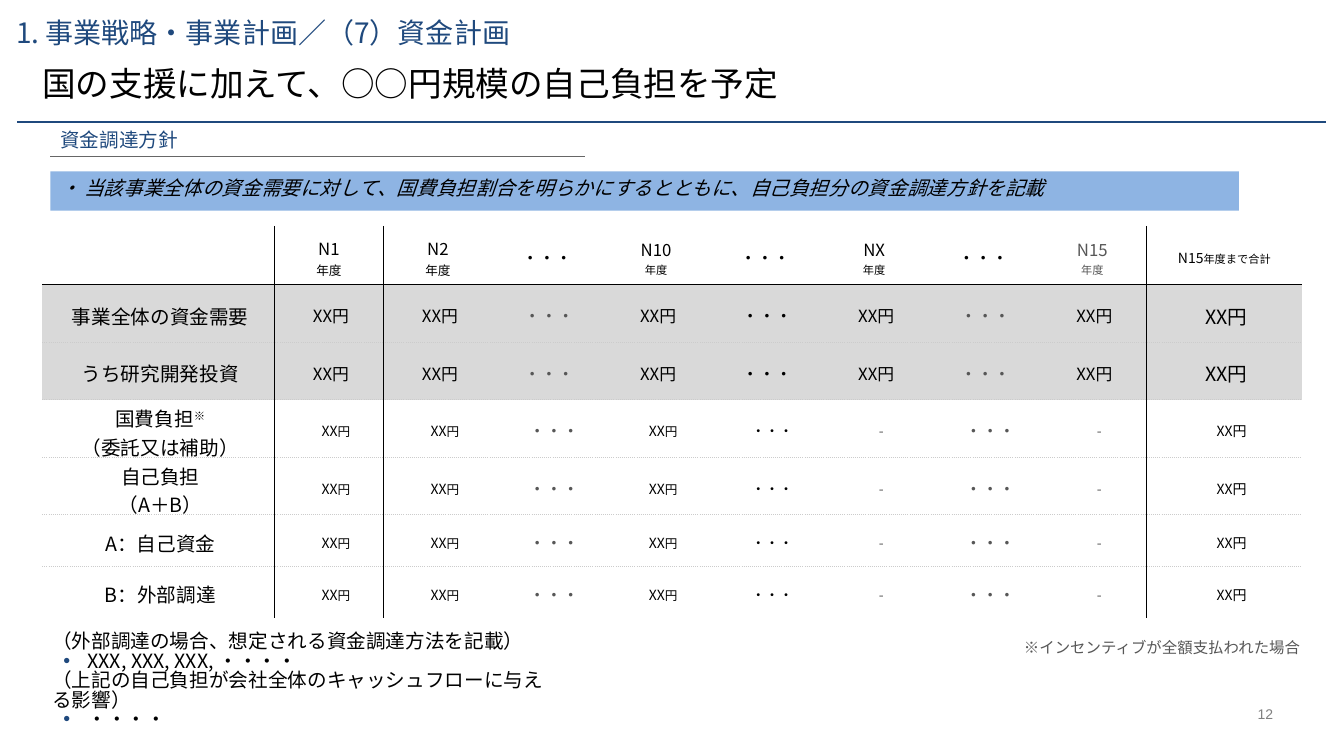
"""Build the funding plan slide with its yearly funding table."""
from lxml.etree import SubElement
from pptx import Presentation
from pptx.dml.color import RGBColor
from pptx.enum.shapes import MSO_CONNECTOR, MSO_SHAPE
from pptx.enum.text import MSO_ANCHOR as ANCHOR, PP_ALIGN as ALIGN
from pptx.oxml.ns import qn
from pptx.util import Pt

COLORS = {
    "navy": "1F497D", "black": "000000", "gray": "575757", "rule": "666666",
    "number": "808080", "banner": "8EB4E3", "band": "D9D9D9", "dots": "CCCCCC",
}
FONT = "Noto Sans CJK JP"
NO_STYLE = "{2D5ABB26-0587-4C30-8999-92F81FD0307C}"


def add_run(paragraph, text, size, color="black", font=FONT):
    run = paragraph.add_run()
    run.text = text
    run.font.size = Pt(size)
    run.font.name = font
    run.font.color.rgb = RGBColor.from_string(COLORS[color])
    SubElement(run._r.get_or_add_rPr(), qn("a:ea"), typeface=font)
    return run


def add_border(cell, side, color):
    border = SubElement(cell._tc.get_or_add_tcPr(), qn(f"a:ln{side}"), w=str(Pt(1)))
    fill = SubElement(border, qn("a:solidFill"))
    SubElement(fill, qn("a:srgbClr"), val=COLORS[color])
    SubElement(border, qn("a:prstDash"), val="sysDot" if color == "dots" else "solid")


presentation = Presentation()
presentation.slide_width = Pt(960)
presentation.slide_height = Pt(540)
slide = presentation.slides.add_slide(presentation.slide_layouts[6])

text_boxes = [
    ("1. 事業戦略・事業計画／（7）資金計画", 11.5, 13.7, 861, 21.6, 0, ANCHOR.TOP, ALIGN.LEFT, 20, "navy", FONT, 0.9),
    ("国の支援に加えて、○○円規模の自己負担を予定", 30.2, 48.2, 885.6, 25.9, 0, ANCHOR.TOP, ALIGN.LEFT, 24, "black", FONT, 0.9),
    ("資金調達方針", 36, 89.3, 381.6, 20.9, 7.2, ANCHOR.MIDDLE, ALIGN.LEFT, 14, "navy", FONT, 1),
    ("※インセンティブが全額支払われた場合", 549.4, 447.8, 386.6, 28.8, 7.2, ANCHOR.MIDDLE, ALIGN.RIGHT, 11, "gray", FONT, 1),
    ("12", 879.1, 504, 30.2, 12.2, 0, ANCHOR.BOTTOM, ALIGN.RIGHT, 10, "number", "Arial", 1),
]
for text, left, top, width, height, inset, anchor, align, size, color, font, spacing in text_boxes:
    frame = slide.shapes.add_textbox(Pt(left), Pt(top), Pt(width), Pt(height)).text_frame
    frame.word_wrap = True
    frame.vertical_anchor = anchor
    frame.margin_left = frame.margin_right = Pt(inset)
    frame.margin_top = frame.margin_bottom = Pt(inset / 2)
    paragraph = frame.paragraphs[0]
    paragraph.alignment = align
    paragraph.line_spacing = spacing
    add_run(paragraph, text, size, color, font)

rules = [(12.2, 947.5, 87.1, "navy", 1), (36, 417.6, 111.6, "rule", 0.75)]
for left, right, top, color, weight in rules:
    rule = slide.shapes.add_connector(MSO_CONNECTOR.STRAIGHT, Pt(left), Pt(top), Pt(right), Pt(top))
    rule.line.color.rgb = RGBColor.from_string(COLORS[color])
    rule.line.width = Pt(weight)
    SubElement(rule._element.spPr, qn("a:effectLst"))

banner = slide.shapes.add_shape(MSO_SHAPE.RECTANGLE, Pt(36), Pt(122.4), Pt(848.9), Pt(28.1))
banner.shadow.inherit = False
banner.fill.solid()
banner.fill.fore_color.rgb = RGBColor.from_string(COLORS["banner"])
banner.line.fill.background()
banner.text_frame.word_wrap = True
banner.text_frame.vertical_anchor = ANCHOR.TOP
paragraph = banner.text_frame.paragraphs[0]
paragraph.alignment = ALIGN.LEFT
properties = paragraph._p.get_or_add_pPr()
properties.set("marL", str(Pt(13.7)))
properties.set("indent", str(Pt(-13.7)))
policy = "・ 当該事業全体の資金需要に対して、国費負担割合を明らかにするとともに、自己負担分の資金調達方針を記載"
add_run(paragraph, policy, 14).font.italic = True

dots = [[("・・・", 12)]]
gray_dots = [[("・・・", 12, "gray")]]
header = [
    [],
    [[("N1", 12)], [("年度", 9)]],
    [[("N2", 12)], [("年度", 9)]],
    dots,
    [[("N10", 12)], [("年度", 8)]],
    dots,
    [[("NX", 12)], [("年度", 8)]],
    dots,
    [[("N15", 12, "gray")], [("年度", 8, "gray")]],
    [[("N15", 10), ("年度まで合計", 8)]],
]
total = [[("XX円", 12)]]
total_cells = [total, total, gray_dots, total, dots, total, gray_dots, total, [[("XX円", 14)]]]
amount = [[("XX", 10), ("円", 9)]]
none = [[("-", 10, "gray")]]
detail_cells = [amount, amount, gray_dots, amount, [[("・・・", 10)]], none, gray_dots, none, [[("XX円", 10)]]]
rows = [
    header,
    [[[("事業全体の資金需要", 14)]]] + total_cells,
    [[[("うち研究開発投資", 14)]]] + total_cells,
    [[[("国費負担", 14), ("※", 14)], [("（委託又は補助）", 14)]]] + detail_cells,
    [[[("自己負担", 14)], [("（A＋B）", 14)]]] + detail_cells,
    [[[("A：自己資金", 14)]]] + detail_cells,
    [[[("B：外部調達", 14)]]] + detail_cells,
]
widths = [165.8] + [77.9] * 8 + [111]
heights = [42.2] + [41.1] * 4 + [36.8] * 2

table = slide.shapes.add_table(
    len(rows), len(widths), Pt(30.2), Pt(161.3), Pt(sum(widths)), Pt(sum(heights))
).table
table.first_row = table.horz_banding = False
table._tbl.tblPr.find(qn("a:tableStyleId")).text = NO_STYLE
for column, width in zip(table.columns, widths):
    column.width = Pt(width)
for row, height in zip(table.rows, heights):
    row.height = Pt(height)

for row_index, row in enumerate(rows):
    for column_index, paragraphs in enumerate(row):
        cell = table.cell(row_index, column_index)
        cell.vertical_anchor = ANCHOR.MIDDLE
        cell.margin_left = Pt(2.9 if row_index else 0)
        cell.margin_top = Pt(2.9)
        cell.margin_right = cell.margin_bottom = 0
        if column_index in (1, 9):
            add_border(cell, "L", "black")
        if column_index in (0, 8):
            add_border(cell, "R", "black")
        if row_index > 0:
            add_border(cell, "T", "black" if row_index == 1 else "dots")
        if row_index < len(rows) - 1:
            add_border(cell, "B", "black" if row_index == 0 else "dots")
        if row_index in (1, 2):
            cell.fill.solid()
            cell.fill.fore_color.rgb = RGBColor.from_string(COLORS["band"])
        else:
            cell.fill.background()
        for index, runs in enumerate(paragraphs):
            frame = cell.text_frame
            paragraph = frame.add_paragraph() if index else frame.paragraphs[0]
            paragraph.alignment = ALIGN.CENTER
            if row_index > 2 and column_index:
                paragraph._p.get_or_add_pPr().set("marL", str(Pt(7.2)))
            for run_data in runs:
                run = add_run(paragraph, *run_data)
                if run.text == "※":
                    run._r.get_or_add_rPr().set("baseline", "30000")

notes = [
    ("（外部調達の場合、想定される資金調達方法を記載）", False),
    ("XXX, XXX, XXX, ・・・・", True),
    ("（上記の自己負担が会社全体のキャッシュフローに与える影響）", False),
    ("・・・・", True),
]
frame = slide.shapes.add_textbox(Pt(30.2), Pt(448.6), Pt(378), Pt(72)).text_frame
frame.word_wrap = True
for index, (text, bulleted) in enumerate(notes):
    paragraph = frame.add_paragraph() if index else frame.paragraphs[0]
    paragraph.line_spacing = 0.83
    if bulleted:
        properties = paragraph._p.get_or_add_pPr()
        properties.set("marL", str(Pt(25.2)))
        properties.set("indent", str(Pt(-17.3)))
        bullet_color = SubElement(properties, qn("a:buClr"))
        SubElement(bullet_color, qn("a:srgbClr"), val=COLORS["navy"])
        SubElement(properties, qn("a:buFont"), typeface="Arial")
        SubElement(properties, qn("a:buChar"), char="•")
    add_run(paragraph, text, 14)

presentation.save("out.pptx")
